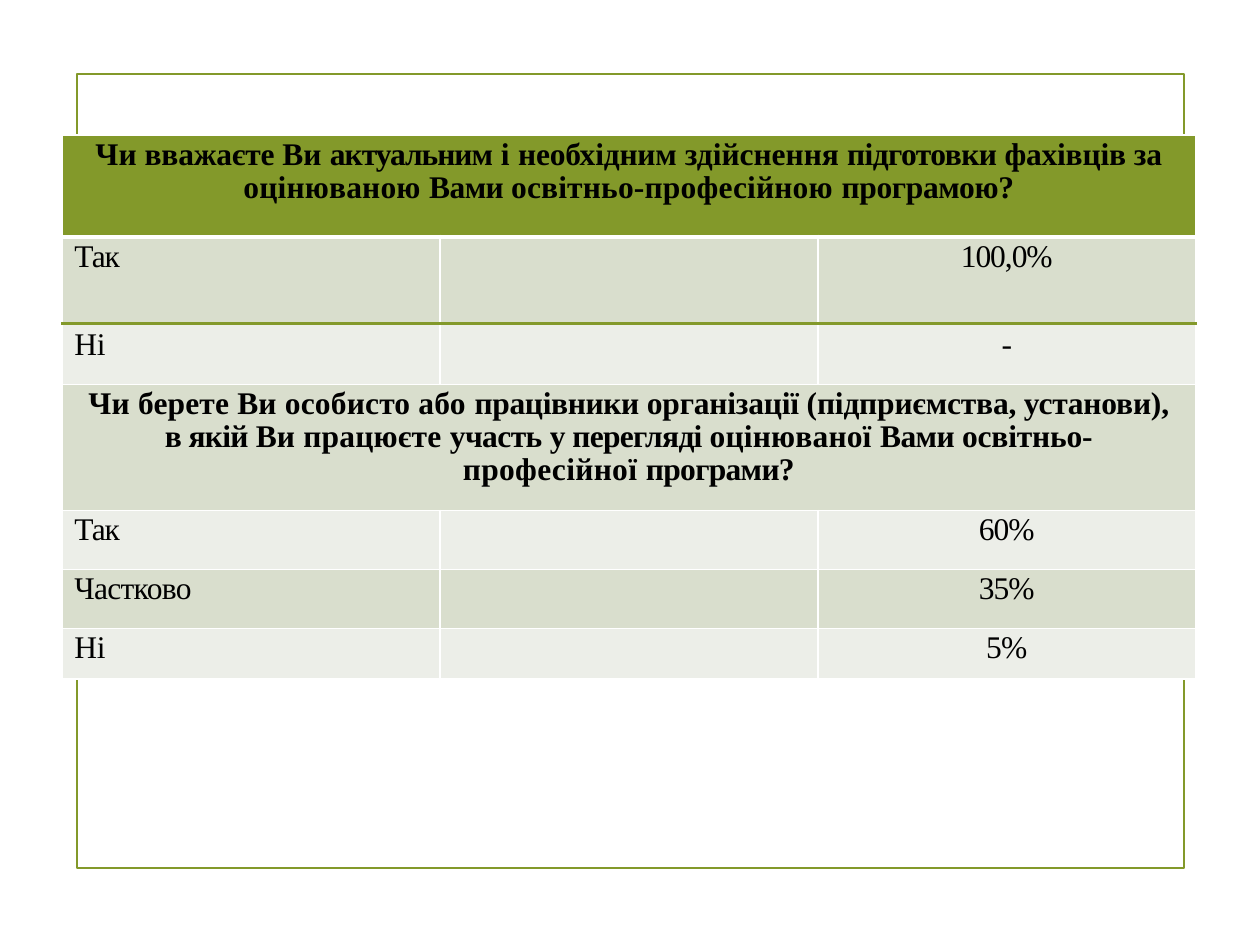
from lxml import etree
from pptx import Presentation, util as u
from pptx.dml.color import RGBColor
from pptx.enum import shapes, text
from pptx.oxml import ns

OLIVE = RGBColor(0x83, 0x99, 0x2A)
SAGE = RGBColor(0xD9, 0xDE, 0xCD)
PALE = RGBColor(0xEC, 0xEE, 0xE8)
WHITE = RGBColor(0xFF, 0xFF, 0xFF)
BLACK = RGBColor(0, 0, 0)
NO_STYLE = "{2D5ABB26-0587-4C30-8999-92F81FD0307C}"
LINE_BREAK = "\v"
CENTER, LEFT = text.PP_ALIGN.CENTER, text.PP_ALIGN.LEFT


def write(cell, paragraphs, bold=False, align=CENTER, before=2.2, indent=0.0):
    """Fill a cell with paragraphs, each a list of (words, letter spacing)."""
    frame = cell.text_frame
    for number, runs in enumerate(paragraphs):
        paragraph = frame.add_paragraph() if number else frame.paragraphs[0]
        paragraph.alignment = align
        paragraph.line_spacing = 0.95
        paragraph.space_before = u.Pt(0 if number else before)
        if indent:
            paragraph._p.get_or_add_pPr().set("marL", str(u.Inches(indent)))
        for words, spacing in runs:
            if words == LINE_BREAK:
                paragraph.add_line_break()
                continue
            run = paragraph.add_run()
            run.text = words
            run.font.name = "Times New Roman"
            run.font.size = u.Pt(18)
            run.font.bold = bold
            run.font.color.rgb = BLACK
            run._r.get_or_add_rPr().set("spc", str(round(spacing * 100)))


def add_borders(cell, borders):
    """Draw cell borders, given as side: (colour, points)."""
    properties = cell._tc.get_or_add_tcPr()
    sides = [side for side in "LRTB" if side in borders]
    for place, side in enumerate(sides):
        colour, width = borders[side]
        line = etree.Element(ns.qn(f"a:ln{side}"), w=str(u.Pt(width)))
        fill = etree.SubElement(line, ns.qn("a:solidFill"))
        etree.SubElement(fill, ns.qn("a:srgbClr"), val=str(colour))
        properties.insert(place, line)


# Table content: one paragraph list per question, one label and value per answer
relevance_question = [
    [("Чи", 0.1), (" вважаєте ", -0.1), ("Ви ", 0.1), ("актуальним", -0.6),
     (" і ", 0.1), ("необхідним", -0.1), (" здійснення ", 0),
     ("підготовки ", -0.3), ("фахівців ", -0.1), ("за", 0)],
    [("оцінюваною ", 0.1), ("Вами ", -0.3), ("освітньо-професійною ", 0.1),
     ("програмою?", -0.2)],
]
review_question = [
    [("Чи берете Ви особисто або ", 0.1), ("працівники ", -0.2),
     ("організації (підприємства, установи),", -0.1), (LINE_BREAK, 0),
     ("в ", -0.7), ("якій ", -0.4), ("Ви працюєте ", 0.1), ("участь ", -0.3),
     ("у ", -0.6), ("перегляді ", -0.4), ("оцінюваної ", 0.1), ("Вами ", -0.3),
     ("освітньо-", -0.1), (LINE_BREAK, 0),
     ("професійної ", 0.2), ("програми?", -0.4)],
]
questions = {1: relevance_question, 4: review_question}
answers = {
    2: (("Так", -0.6), ("100,0%", -0.6)),
    3: (("Ні", -0.1), ("-", 0)),
    5: (("Так", -0.6), ("60%", -0.5)),
    6: (("Частково", -0.4), ("35%", -0.5)),
    7: (("Ні", -0.1), ("5%", -0.5)),
}
row_heights = [0.48, 0.81, 0.69, 0.48, 1, 0.47, 0.47, 0.4, 1.49]
row_fills = [None, OLIVE, SAGE, PALE, SAGE, PALE, SAGE, PALE, None]
row_count, column_count = len(row_heights), 3
# Line under each row; the last row has none
rules = [(WHITE, 1), (WHITE, 3), (OLIVE, 2.25)] + [(WHITE, 1)] * 5

presentation = Presentation()
presentation.slide_width = u.Inches(10)
presentation.slide_height = u.Inches(7.5)
slide = presentation.slides.add_slide(presentation.slide_layouts[6])

# Frame behind the table
frame = slide.shapes.add_shape(
    shapes.MSO_SHAPE.RECTANGLE,
    u.Inches(0.61), u.Inches(0.59), u.Inches(8.79), u.Inches(6.3))
frame.shadow.inherit = False
frame.fill.background()
frame.line.color.rgb = OLIVE
frame.line.width = u.Pt(1.25)

# Table grid
graphic = slide.shapes.add_table(
    row_count, column_count,
    u.Inches(0.49), u.Inches(0.59), u.Inches(9), u.Inches(sum(row_heights)))
table = graphic.table
table.first_row = table.horz_banding = False
table._tbl.tblPr.find(ns.qn("a:tableStyleId")).text = NO_STYLE
for row, height in zip(table.rows, row_heights):
    row.height = u.Inches(height)

# Fills, margins and borders
for row in range(row_count):
    for column in range(column_count):
        cell = table.cell(row, column)
        cell.margin_left = cell.margin_right = cell.margin_bottom = 0
        cell.margin_top = u.Inches(0.04 if row == 3 else 0.03)
        borders = {}
        if row > 0:
            borders["T"] = rules[row - 1]
        if row < len(rules):
            borders["B"] = rules[row]
        if row_fills[row] is None:
            cell.fill.background()
        else:
            cell.fill.solid()
            cell.fill.fore_color.rgb = row_fills[row]
            borders["L"] = borders["R"] = (WHITE, 1)
        add_borders(cell, borders)

# Full-width rows: the questions and the empty first and last rows
for row in [0, *questions, row_count - 1]:
    table.cell(row, 0).merge(table.cell(row, column_count - 1))
for row, question in questions.items():
    write(table.cell(row, 0), question, bold=True)

# Answers
for row, (label, value) in answers.items():
    before = 2.6 if row == 3 else 2.2
    write(table.cell(row, 0), [[label]], align=LEFT, before=before, indent=0.1)
    write(table.cell(row, 2), [[value]], before=before)

presentation.save("out.pptx")
